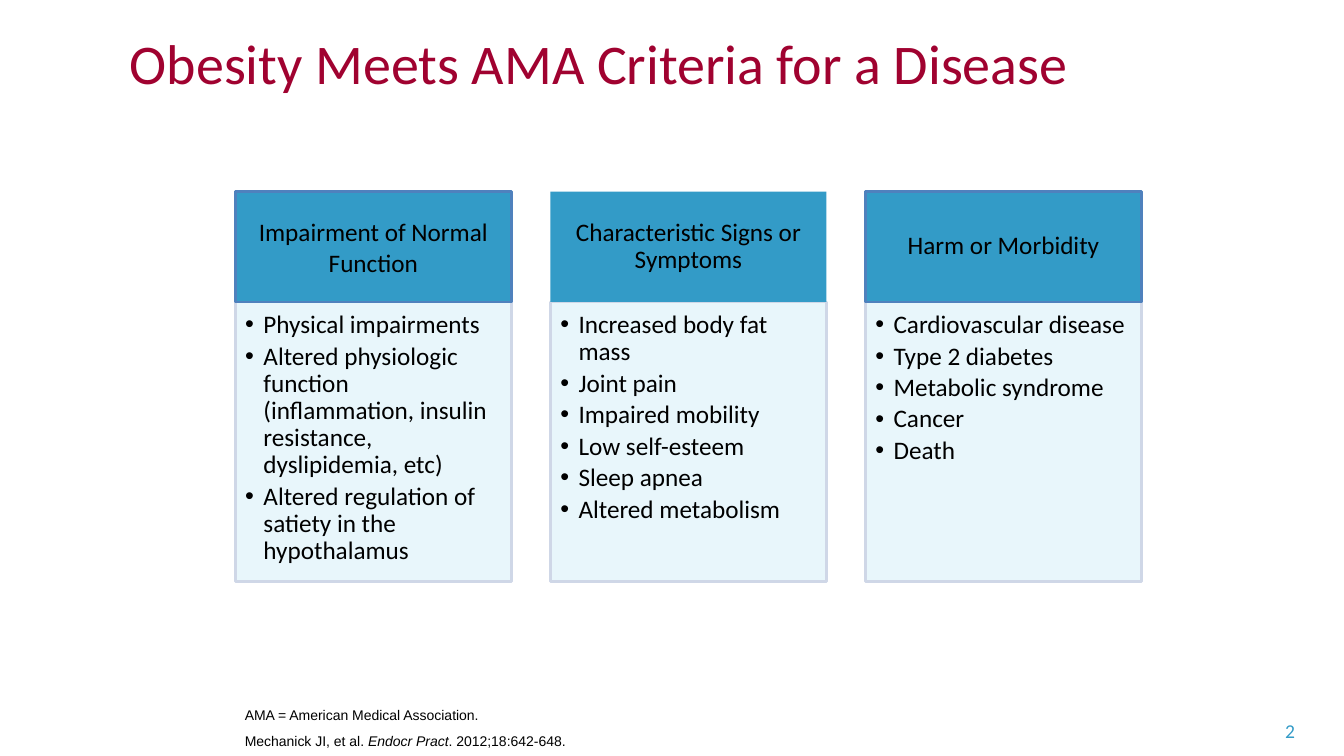
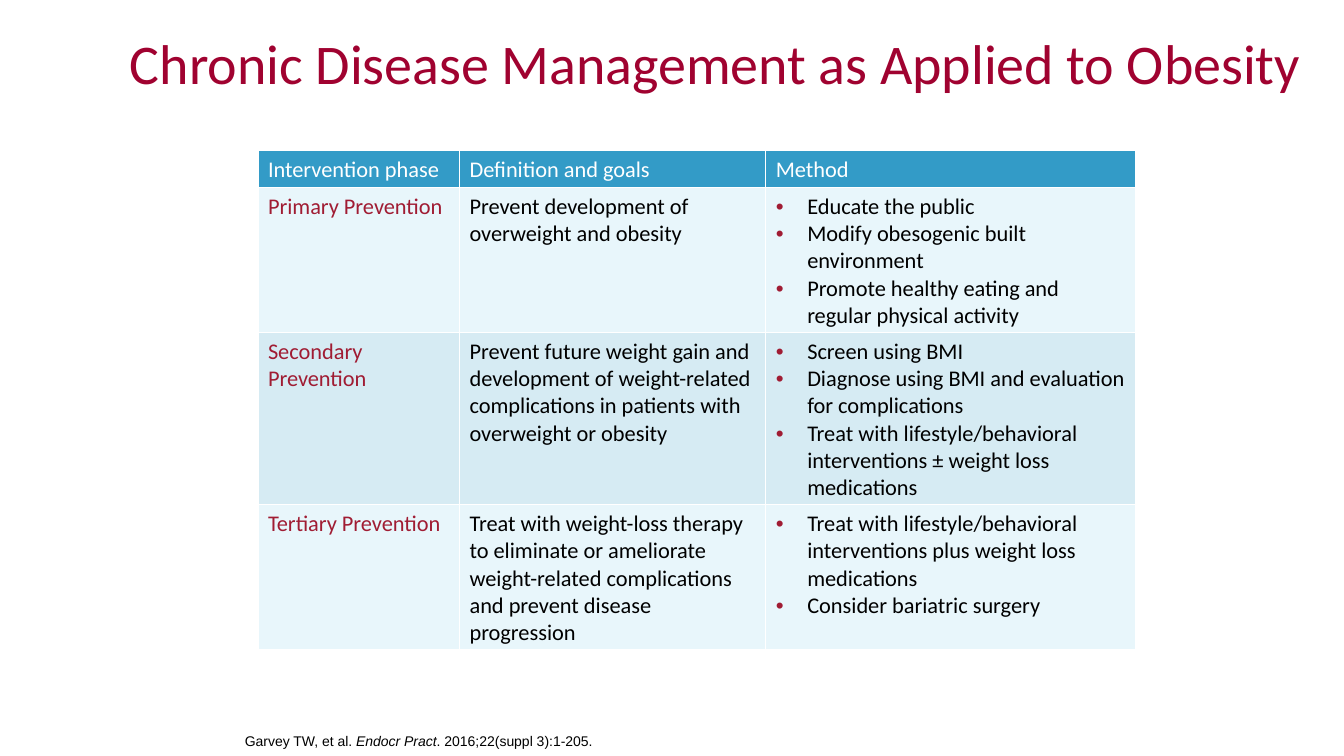
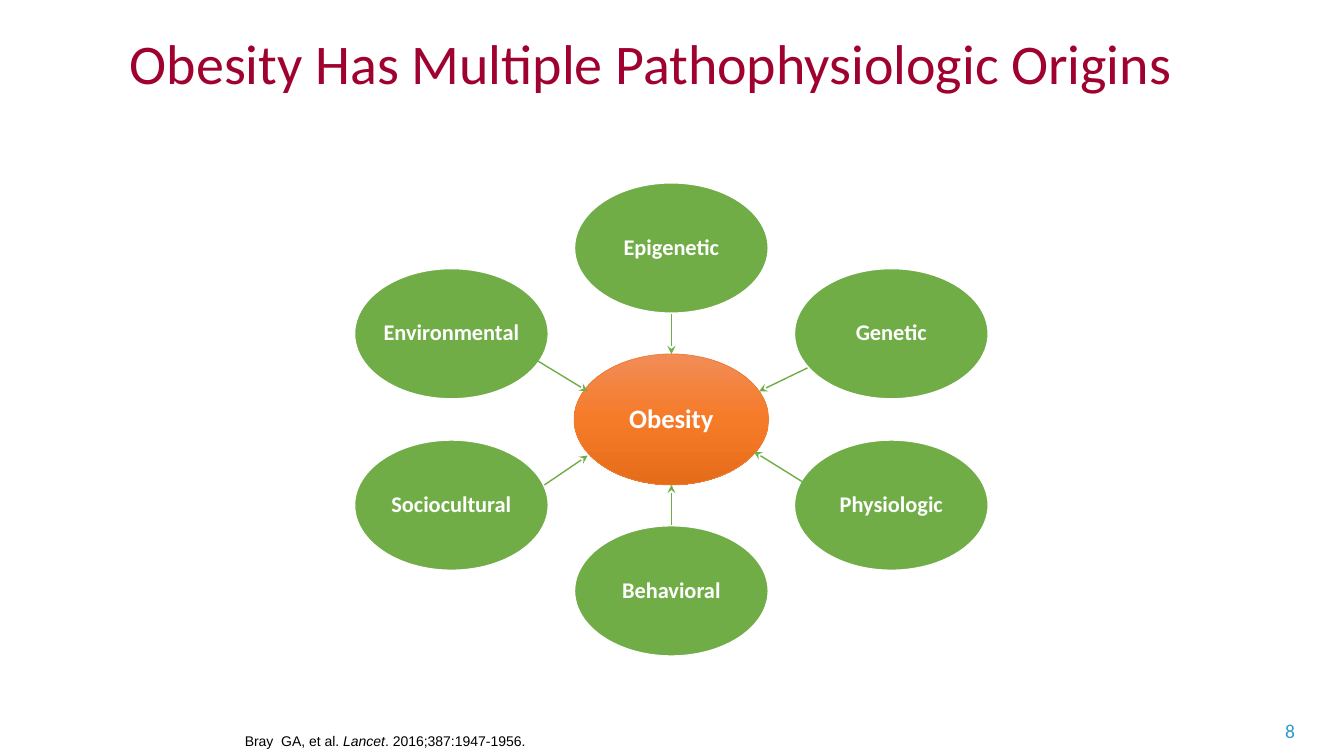
import copy
import math
from typing import Any, NamedTuple

import lxml.etree
import pptx
import pptx.dml.color
import pptx.enum.shapes
import pptx.enum.text
import pptx.oxml.ns
import pptx.util

Cm = pptx.util.Cm
Pt = pptx.util.Pt
ANCHOR = pptx.enum.text.MSO_ANCHOR
ALIGN = pptx.enum.text.PP_ALIGN
SHAPE = pptx.enum.shapes.MSO_SHAPE
qn = pptx.oxml.ns.qn

WINE, RED, BLUE, EDGE = "A00230", "A01C33", "339BC7", "4F81BD"
PALE, TINT, FRAME = "E8F6FB", "D6EBF3", "CFD7E7"
GREEN, RUST, BLACK, WHITE = "70AD47", "ED7D31", "000000", "FFFFFF"
GLOW = ((0, "F18C57"), (0.5, "F67B28"), (1, "E56C19"))


class Box(NamedTuple):
    """Left, top, width and height in centimetres."""
    left: float
    top: float
    width: float
    height: float

    def size(self) -> list[int]:
        return [Cm(side) for side in self]


class Font(NamedTuple):
    size: float
    color: str = BLACK
    name: str = "Calibri"
    bold: bool = False


class Bullet(NamedTuple):
    """Hanging indent in centimetres and, if it differs from the text, the dot's colour."""
    indent: float
    color: str | None = None


class Panel(NamedTuple):
    head: str
    items: list[str]
    spacing: float
    edge: str | None


class Row(NamedTuple):
    height: float
    fill: str
    phase: str
    goal: str
    steps: list[str]


class Cause(NamedTuple):
    name: str
    start: tuple[float, float]
    end: tuple[float, float]


TITLE_BOX = Box(3.02, 0.79, 30.28, 2.29)
PAGE_BOX = Box(31.6, 17.98, 1.83, 0.86)

PANELS = [
    Panel("Impairment of Normal Function", [
        "Physical impairments",
        "Altered physiologic function (inflammation, insulin resistance, dyslipidemia, etc)",
        "Altered regulation of satiety in the hypothalamus"], 1, EDGE),
    Panel("Characteristic Signs or Symptoms", [
        "Increased body fat mass", "Joint pain", "Impaired mobility",
        "Low self-esteem", "Sleep apnea", "Altered metabolism"], 0.9, None),
    Panel("Harm or Morbidity", [
        "Cardiovascular disease", "Type 2 diabetes", "Metabolic syndrome",
        "Cancer", "Death"], 0.9, EDGE),
]

HEADS = ["Intervention phase", "Definition and goals", "Method"]
WIDTHS = [5.08, 7.72, 9.32]
HEAD_HIGH = 0.93
ROWS = [
    Row(3.65, PALE, "Primary Prevention", "Prevent development of overweight and obesity", [
        "Educate the public", "Modify obesogenic built environment",
        "Promote healthy eating and regular physical activity"]),
    Row(4.34, TINT, "Secondary Prevention",
        "Prevent future weight gain and development of weight-related complications "
        "in patients with overweight or obesity", [
            "Screen using BMI", "Diagnose using BMI and evaluation for complications",
            "Treat with lifestyle/behavioral interventions ± weight loss medications"]),
    Row(3.65, PALE, "Tertiary Prevention",
        "Treat with weight-loss therapy to eliminate or ameliorate weight-related "
        "complications and prevent disease progression", [
            "Treat with lifestyle/behavioral interventions plus weight loss medications",
            "Consider bariatric surgery"]),
]

CAUSES = [
    Cause("Epigenetic", (16.92, 7.92), (16.92, 8.92)),
    Cause("Genetic", (20.35, 9.27), (19.13, 9.86)),
    Cause("Physiologic", (20.27, 12.17), (19, 11.38)),
    Cause("Behavioral", (16.92, 13.23), (16.92, 12.22)),
    Cause("Sociocultural", (13.72, 12.22), (14.81, 11.48)),
    Cause("Environmental", (13.46, 9.04), (14.81, 9.86)),
]


def rgb(code: str) -> pptx.dml.color.RGBColor:
    return pptx.dml.color.RGBColor.from_string(code)


def assign(target: Any, values: dict[str, Any]) -> None:
    for name, value in values.items():
        setattr(target, name, value)


def paint(fill: Any, color: str) -> None:
    fill.solid()
    fill.fore_color.rgb = rgb(color)


def outline(line: Any, color: str | None, width: float) -> None:
    if color is None:
        line.fill.background()
    else:
        paint(line.fill, color)
        line.width = Pt(width)


def add_dot(para: Any, bullet: Bullet) -> None:
    props = para._p.get_or_add_pPr()
    props.set("marL", str(Cm(bullet.indent)))
    props.set("indent", str(-Cm(bullet.indent)))
    if bullet.color:
        tone = lxml.etree.SubElement(props, qn("a:buClr"))
        lxml.etree.SubElement(tone, qn("a:srgbClr"), val=bullet.color)
    lxml.etree.SubElement(props, qn("a:buFont"), typeface="Arial")
    lxml.etree.SubElement(props, qn("a:buChar"), char="•")


def write(frame: Any, lines: list[str], font: Font, align: Any = ALIGN.LEFT,
          spacing: float = 1, before: float = 0, bullet: Bullet | None = None) -> None:
    """Fill a text frame; words between asterisks become italic."""
    for row, words in enumerate(lines):
        para = frame.add_paragraph() if row else frame.paragraphs[0]
        if bullet:
            add_dot(para, bullet)
        assign(para, {"alignment": align, "line_spacing": spacing,
                      "space_before": Pt(before if row else 0)})
        for part, piece in enumerate(words.split("*")):
            run = para.add_run()
            run.text = piece
            assign(run.font, {"size": Pt(font.size), "name": font.name,
                              "bold": font.bold, "italic": part % 2 == 1})
            run.font.color.rgb = rgb(font.color)


def pad(frame: Any, inset: float) -> None:
    sides = ("left", "top", "right", "bottom")
    assign(frame, {f"margin_{side}": Cm(inset) for side in sides})


def add_block(slide: Any, kind: Any, box: Box, fill: str, edge: str | None,
              weight: float) -> Any:
    block = slide.shapes.add_shape(kind, *box.size())
    block.shadow.inherit = False
    paint(block.fill, fill)
    outline(block.line, edge, weight)
    return block


def add_note(slide: Any, box: Box, lines: list[str], font: Font, anchor: Any,
             **form: Any) -> None:
    frame = slide.shapes.add_textbox(*box.size()).text_frame
    assign(frame, {"word_wrap": True, "vertical_anchor": anchor})
    write(frame, lines, font, **form)


def add_slide(deck: Any, title: str, notes: list[str], page: str = "") -> Any:
    """Add a slide with its title, sources at the foot and page number."""
    slide = deck.slides.add_slide(deck.slide_layouts[5])
    holder = slide.shapes.title
    assign(holder, dict(zip(("left", "top", "width", "height"), TITLE_BOX.size())))
    assign(holder.text_frame, {"vertical_anchor": ANCHOR.TOP, "word_wrap": True,
                               "auto_size": pptx.enum.text.MSO_AUTO_SIZE.NONE})
    write(holder.text_frame, [title], Font(40, WINE), spacing=0.9)
    high = 0.69 + 0.63 * (len(notes) - 1)
    add_note(slide, Box(5.92, 19 - high, 18.47, high), notes, Font(10, name="Arial"),
             ANCHOR.BOTTOM, before=6)
    if page:
        add_note(slide, PAGE_BOX, [page], Font(14, BLUE), ANCHOR.TOP, align=ALIGN.CENTER)
    return slide


def add_panel(slide: Any, panel: Panel, left: float) -> None:
    top, width, split, foot = 4.83, 6.96, 7.61, 14.66
    body = add_block(slide, SHAPE.RECTANGLE, Box(left, split, width, foot - split),
                     PALE, FRAME, 2).text_frame
    assign(body, {"word_wrap": True, "vertical_anchor": ANCHOR.TOP})
    pad(body, 0.25)
    write(body, panel.items, Font(18), spacing=0.9, before=3, bullet=Bullet(0.46))
    head = add_block(slide, SHAPE.RECTANGLE, Box(left, top, width, split - top),
                     BLUE, panel.edge, 2).text_frame
    assign(head, {"word_wrap": True, "vertical_anchor": ANCHOR.MIDDLE})
    pad(head, 0.5)
    write(head, [panel.head], Font(18), align=ALIGN.CENTER, spacing=panel.spacing)


def fill_cell(cell: Any, lines: list[str], fill: str, color: str,
              bullet: Bullet | None = None) -> None:
    paint(cell.fill, fill)
    props = cell._tc.get_or_add_tcPr()
    for spot, side in enumerate("LRTB"):
        line = lxml.etree.Element(qn(f"a:ln{side}"), w=str(Pt(1)))
        solid = lxml.etree.SubElement(line, qn("a:solidFill"))
        lxml.etree.SubElement(solid, qn("a:srgbClr"), val=WHITE)
        props.insert(spot, line)
    write(cell.text_frame, lines, Font(16, color), bullet=bullet)


def add_phases(slide: Any) -> None:
    highs = [HEAD_HIGH] + [row.height for row in ROWS]
    box = Box(6.5, 3.8, sum(WIDTHS), sum(highs))
    table = slide.shapes.add_table(len(highs), len(WIDTHS), *box.size()).table
    for column, width in zip(table.columns, WIDTHS):
        column.width = Cm(width)
    for band, high in zip(table.rows, highs):
        band.height = Cm(high)
    for col, head in enumerate(HEADS):
        fill_cell(table.cell(0, col), [head], BLUE, WHITE)
    for line, row in enumerate(ROWS, 1):
        fill_cell(table.cell(line, 0), [row.phase], row.fill, RED)
        fill_cell(table.cell(line, 1), [row.goal], row.fill, BLACK)
        fill_cell(table.cell(line, 2), row.steps, row.fill, BLACK, Bullet(0.79, RED))


def add_oval(slide: Any, name: str, mid: tuple[float, float], size: float,
             fill: str, edge: str, weight: float) -> Any:
    width, high = 4.9, 3.3
    box = Box(mid[0] - width / 2, mid[1] - high / 2, width, high)
    oval = add_block(slide, SHAPE.OVAL, box, fill, edge, weight)
    assign(oval.text_frame, {"word_wrap": False, "vertical_anchor": ANCHOR.MIDDLE})
    pad(oval.text_frame, 0)
    write(oval.text_frame, [name], Font(size, WHITE, bold=True), ALIGN.CENTER, 0.9)
    return oval


def add_glow(oval: Any) -> None:
    """Give the oval a gradient of three stops from top to bottom."""
    oval.fill.gradient()
    oval.fill.gradient_angle = 270
    stops = oval._element.spPr.find(".//" + qn("a:gsLst"))
    stops.append(copy.deepcopy(stops[0]))
    for stop, (place, color) in zip(oval.fill.gradient_stops, GLOW):
        stop.position = place
        stop.color.rgb = rgb(color)


def add_arrow(slide: Any, start: tuple[float, float], end: tuple[float, float]) -> None:
    kind = pptx.enum.shapes.MSO_CONNECTOR.STRAIGHT
    arrow = slide.shapes.add_connector(kind, *[Cm(spot) for spot in start + end])
    outline(arrow.line, GREEN, 1)
    props = arrow._element.spPr
    lxml.etree.SubElement(props.find(qn("a:ln")), qn("a:tailEnd"), type="stealth")
    lxml.etree.SubElement(props, qn("a:effectLst"))


def add_wheel(slide: Any) -> None:
    mid_x, mid_y, reach_x, reach_y = 16.92, 10.57, 6.4, 4.32
    hub = add_oval(slide, "Obesity", (mid_x, mid_y), 19, RUST, RUST, 0.5)
    add_glow(hub)
    for turn, cause in enumerate(CAUSES):
        angle = math.tau * turn / len(CAUSES)
        spot = (mid_x + reach_x * math.sin(angle), mid_y - reach_y * math.cos(angle))
        add_oval(slide, cause.name, spot, 16, GREEN, WHITE, 1.5)
    for cause in CAUSES:
        add_arrow(slide, cause.start, cause.end)


def main() -> None:
    deck = pptx.Presentation()
    assign(deck, {"slide_width": Cm(33.87), "slide_height": Cm(19.05)})

    slide = add_slide(deck, "Obesity Meets AMA Criteria for a Disease", [
        "AMA = American Medical Association.",
        "Mechanick JI, et al. *Endocr Pract*. 2012;18:642-648."], "2")
    for turn, panel in enumerate(PANELS):
        add_panel(slide, panel, 5.93 + 7.94 * turn)

    slide = add_slide(deck, "Chronic Disease Management as Applied to Obesity", [
        "Garvey TW, et al. *Endocr Pract*. 2016;22(suppl 3):1-205."])
    add_phases(slide)

    slide = add_slide(deck, "Obesity Has Multiple Pathophysiologic Origins", [
        "Bray  GA, et al. *Lancet*. 2016;387:1947-1956."], "8")
    add_wheel(slide)

    deck.save("out.pptx")


if __name__ == "__main__":
    main()
